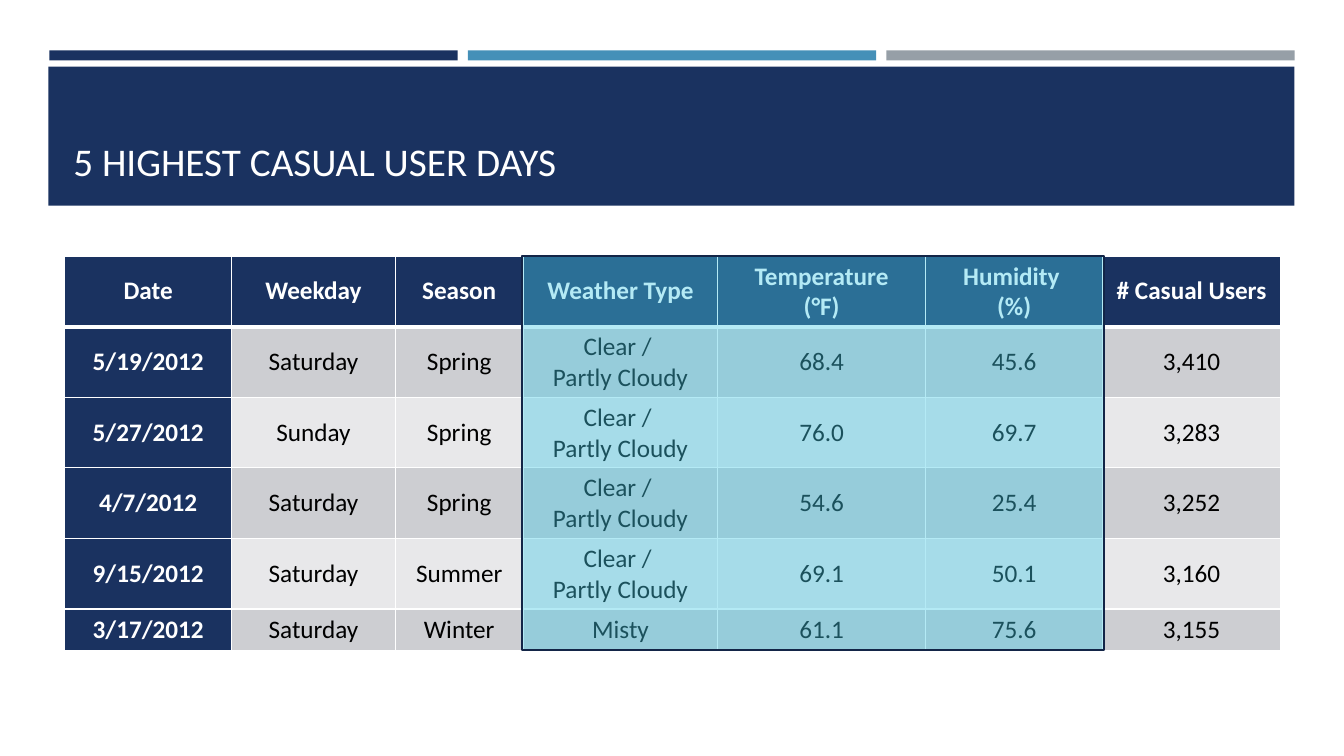
"""Build the slide on the days with the most casual users."""
import dataclasses

import lxml.etree
import pptx
import pptx.dml.color
import pptx.enum.shapes
import pptx.enum.text
import pptx.oxml.ns
import pptx.util

Inches = pptx.util.Inches
Pt = pptx.util.Pt
Align = pptx.enum.text.PP_ALIGN
Anchor = pptx.enum.text.MSO_ANCHOR


@dataclasses.dataclass(frozen=True)
class Theme:
    """Hold the colours and type sizes."""
    navy: str = "1A3260"
    blue: str = "4590B8"
    gray: str = "969FA7"
    white: str = "FFFFFF"
    black: str = "000000"
    dark: str = "CDCED2"
    light: str = "E8E8EA"
    cyan: str = "45CBE8"
    edge: str = "132547"
    font: str = "Calibri"
    title: int = 28
    body: int = 18


def rgb(code):
    """Return a colour from its hex code."""
    return pptx.dml.color.RGBColor.from_string(code)


def child(node, tag, **attrs):
    """Add an element of the drawing namespace."""
    return lxml.etree.SubElement(node, pptx.oxml.ns.qn(tag), **attrs)


def write(frame, text, *, font, size, color, bold=False, align=Align.LEFT):
    """Write text into a frame, one paragraph a line."""
    for i, line in enumerate(text.split("\n")):
        para = frame.add_paragraph() if i else frame.paragraphs[0]
        para.alignment = align
        run = para.add_run()
        run.text = line
        run.font.name = font
        run.font.size = Pt(size)
        run.font.bold = bold
        run.font.color.rgb = rgb(color)


class Deck:
    """Draw elements in one style on the current slide."""

    def __init__(self, theme):
        """Start a deck with one blank slide."""
        self.theme = theme
        self.show = pptx.Presentation()
        self.show.slide_width = Inches(13.33)
        self.show.slide_height = Inches(7.5)
        self.slide = self.show.slides.add_slide(self.show.slide_layouts[6])

    def rect(self, x, y, w, h, fill, alpha=None, line=None):
        """Draw a rectangle."""
        shape = self.slide.shapes.add_shape(
            pptx.enum.shapes.MSO_SHAPE.RECTANGLE,
            Inches(x), Inches(y), Inches(w), Inches(h))
        shape.shadow.inherit = False
        shape.fill.solid()
        shape.fill.fore_color.rgb = rgb(fill)
        if alpha:
            tone = shape.fill._xPr.find(".//" + pptx.oxml.ns.qn("a:srgbClr"))
            child(tone, "a:alpha", val=str(alpha * 1000))
        if line:
            shape.line.color.rgb = rgb(line)
            shape.line.width = Pt(1.75)
        else:
            shape.line.fill.background()

    def title(self, x, y, w, h, text):
        """Add the title."""
        box = self.slide.shapes.add_textbox(
            Inches(x), Inches(y), Inches(w), Inches(h))
        frame = box.text_frame
        frame.word_wrap = True
        frame.vertical_anchor = Anchor.BOTTOM
        write(frame, text, font=self.theme.font, size=self.theme.title,
              color=self.theme.white)

    def border(self, cell, top, bottom):
        """Draw white lines on the sides of a cell."""
        props = cell._tc.get_or_add_tcPr()
        for side, width in zip("LRTB", (1, 1, top, bottom)):
            line = child(props, f"a:ln{side}", w=str(Pt(width)))
            fill = child(line, "a:solidFill")
            child(fill, "a:srgbClr", val=self.theme.white)

    def cell(self, cell, text, row, col):
        """Fill and style one table cell."""
        theme = self.theme
        head = row == 0 or col == 0
        self.border(cell, 3 if row == 1 else 1, 3 if row == 0 else 1)
        cell.fill.solid()
        band = theme.dark if row % 2 else theme.light
        cell.fill.fore_color.rgb = rgb(theme.navy if head else band)
        cell.vertical_anchor = Anchor.MIDDLE
        write(cell.text_frame, text, font=theme.font, size=theme.body,
              color=theme.white if head else theme.black, bold=head,
              align=Align.CENTER)

    def table(self, x, y, cols, rows, data):
        """Add a table with a header row and a header column."""
        table = self.slide.shapes.add_table(
            len(rows), len(cols), Inches(x), Inches(y),
            Inches(sum(cols)), Inches(sum(rows))).table
        for col, width in zip(table.columns, cols):
            col.width = Inches(width)
        for row, height in zip(table.rows, rows):
            row.height = Inches(height)
        for r, line in enumerate(data):
            for c, text in enumerate(line):
                self.cell(table.cell(r, c), text, r, c)


CLEAR = "Clear / \nPartly Cloudy"
DAYS = [
    ("Date", "Weekday", "Season", "Weather Type", "Temperature\n(°F)",
     "Humidity \n(%)", "# Casual Users"),
    ("5/19/2012", "Saturday", "Spring", CLEAR, "68.4", "45.6", "3,410"),
    ("5/27/2012", "Sunday", "Spring", CLEAR, "76.0", "69.7", "3,283"),
    ("4/7/2012", "Saturday", "Spring", CLEAR, "54.6", "25.4", "3,252"),
    ("9/15/2012", "Saturday", "Summer", CLEAR, "69.1", "50.1", "3,160"),
    ("3/17/2012", "Saturday", "Winter", "Misty", "61.1", "75.6", "3,155"),
]


def main():
    """Build and save the slide."""
    theme = Theme()
    deck = Deck(theme)
    for i, tone in enumerate((theme.navy, theme.blue, theme.gray)):
        deck.rect(0.49 + i * 4.15, 0.5, 4.05, 0.1, tone)
    deck.rect(0.48, 0.66, 12.36, 1.38, theme.navy)
    deck.title(0.63, 0.8, 12.06, 1.08, "5 HIGHEST CASUAL USER DAYS")
    deck.table(0.64, 2.54, (1.66, 1.62, 1.27, 1.93, 2.06, 1.76, 1.76),
               (0.7,) * 5 + (0.41,), DAYS)
    deck.rect(5.18, 2.54, 5.77, 3.91, theme.cyan, alpha=40, line=theme.edge)
    deck.show.save("out.pptx")


if __name__ == "__main__":
    main()
